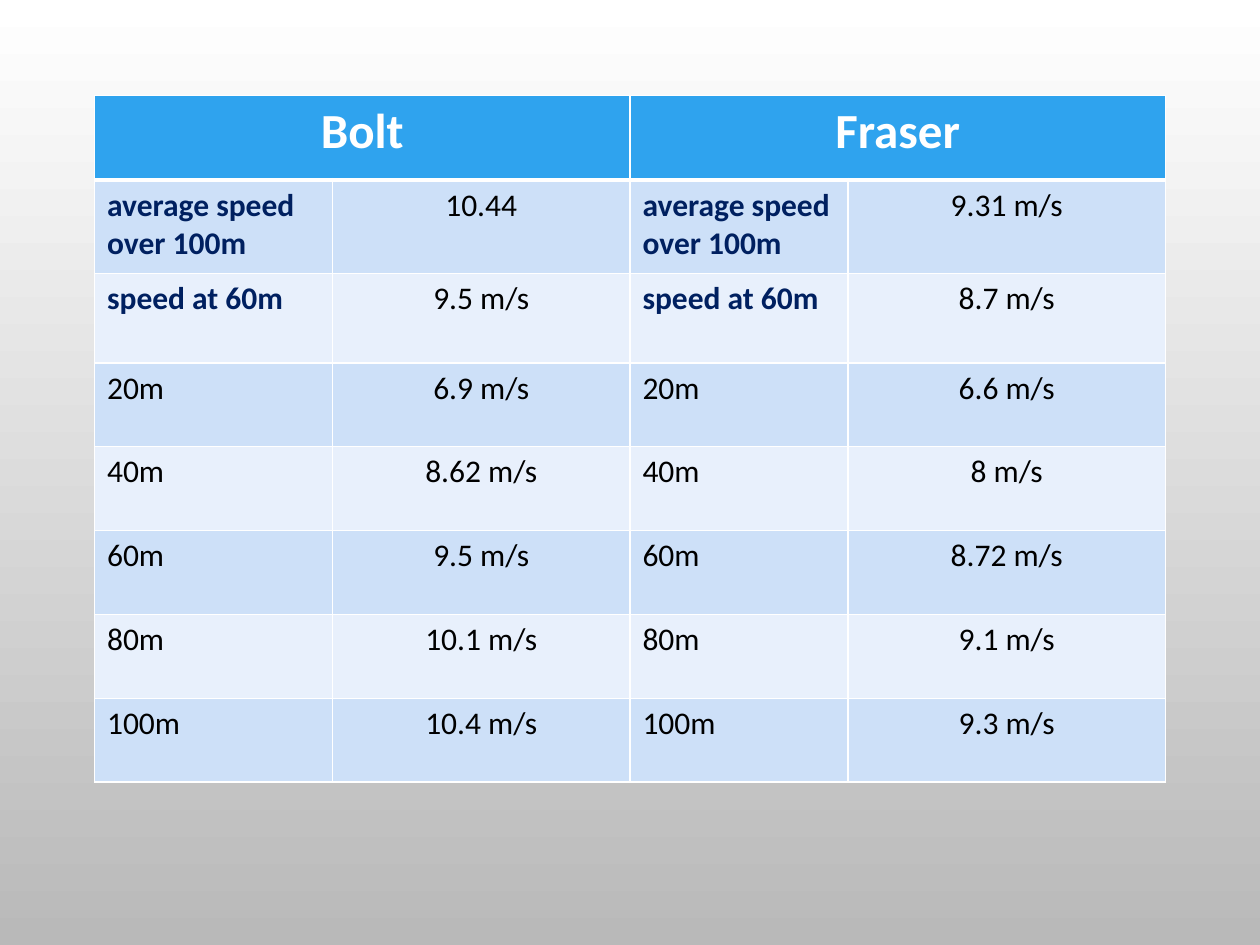
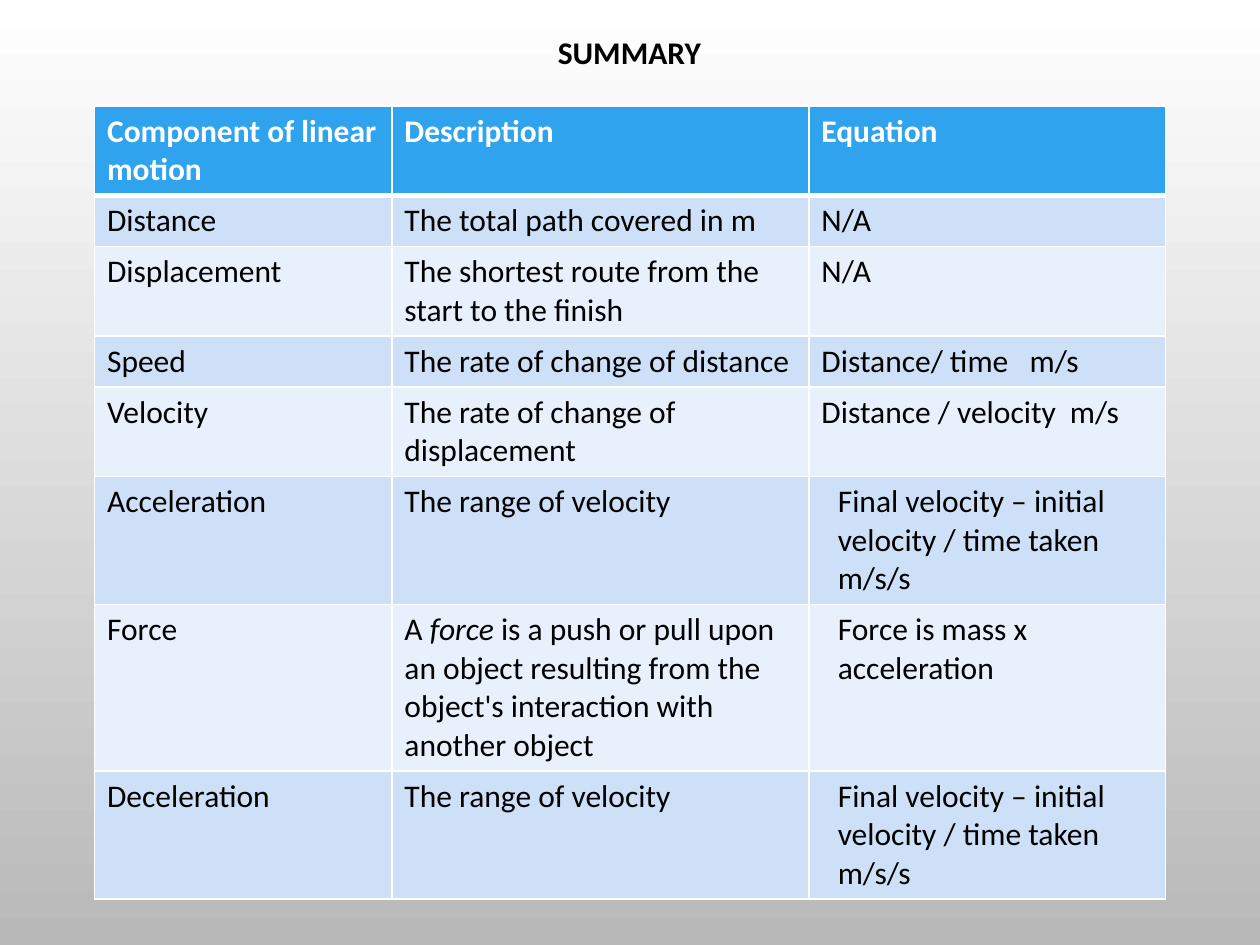
from lxml.etree import SubElement
from pptx import Presentation
from pptx.dml.color import RGBColor
from pptx.enum.text import PP_ALIGN
from pptx.oxml.ns import qn
from pptx.util import Inches, Pt

FONT = "Calibri"
COLORS = {
    "header": "2FA3EE",
    "band_dark": "CDE0F8",
    "band_light": "E8F0FC",
    "white": "FFFFFF",
    "black": "000000",
    "navy": "002060",
    "page_bottom": "B9B9B9",
}

RUNNERS = ["Bolt", "Fraser"]
KEY_SPEEDS = [
    ("average speed over 100m", "10.44", "9.31 m/s"),
    ("speed at 60m", "9.5 m/s", "8.7 m/s"),
]
SPLIT_SPEEDS = [
    ("20m", "6.9 m/s", "6.6 m/s"),
    ("40m", "8.62 m/s", "8 m/s"),
    ("60m", "9.5 m/s", "8.72 m/s"),
    ("80m", "10.1 m/s", "9.1 m/s"),
    ("100m", "10.4 m/s", "9.3 m/s"),
]
SPEED_COLUMNS = [1.89, 2.36, 1.73, 2.52]
SPEED_ROWS = [0.67, 0.74, 0.71] + [3.33 / 5] * 5

SUMMARY_TITLE = "SUMMARY"
SUMMARY_HEADINGS = ["Component of linear motion", "Description", "Equation"]
VELOCITY_CHANGE = "Final velocity – initial velocity / time taken m/s/s"
FORCE_PARTS = [
    ("A ", False),
    ("force", True),
    (" is a push or pull upon an object resulting from the object's "
     "interaction with another object", False),
]
SUMMARY = [
    ("Distance", "The total path covered in m", "N/A"),
    ("Displacement", "The shortest route from the start to the finish", "N/A"),
    ("Speed", "The rate of change of distance", "Distance/ time   m/s"),
    ("Velocity", "The rate of change of displacement", "Distance / velocity  m/s"),
    ("Acceleration", "The range of velocity", VELOCITY_CHANGE),
    ("Force", FORCE_PARTS, "Force is mass x acceleration"),
    ("Deceleration", "The range of velocity", VELOCITY_CHANGE),
]
INDENTED_COMPONENTS = {"Acceleration", "Force", "Deceleration"}
SUMMARY_COLUMNS = [2.36, 3.31, 2.83]
SUMMARY_LINES = [2, 1, 2, 1, 2, 3, 4, 3]


def color(name):
    return RGBColor.from_string(COLORS[name])


def write(frame, text, size=18, ink="black", bold=False, align=PP_ALIGN.LEFT, indent=0):
    para = frame.paragraphs[0]
    para.alignment = align
    if indent:
        properties = para._p.get_or_add_pPr()
        properties.set("marL", str(Inches(indent)))
        properties.set("indent", "0")
    parts = [(text, False)] if isinstance(text, str) else text
    for words, italic in parts:
        span = para.add_run()
        span.text = words
        span.font.name = FONT
        span.font.size = Pt(size)
        span.font.bold = bold
        span.font.italic = italic
        span.font.color.rgb = color(ink)


def draw_borders(cell, top=1, bottom=1):
    properties = cell._tc.get_or_add_tcPr()
    for side, points in (("L", 1), ("R", 1), ("T", top), ("B", bottom)):
        line = SubElement(properties, qn(f"a:ln{side}"), w=str(Pt(points)))
        fill = SubElement(line, qn("a:solidFill"))
        SubElement(fill, qn("a:srgbClr"), val=COLORS["white"])


def add_grid(page, top, columns, rows):
    frame = page.shapes.add_table(
        len(rows), len(columns), Inches(0.75), Inches(top),
        Inches(sum(columns)), Inches(sum(rows)))
    table = frame.table
    for column, width in zip(table.columns, columns):
        column.width = Inches(width)
    for index, (row, height) in enumerate(zip(table.rows, rows)):
        row.height = Inches(height)
        band = "header" if index == 0 else "band_dark" if index % 2 else "band_light"
        for cell in row.cells:
            draw_borders(cell, top=3 if index == 1 else 1, bottom=3 if index == 0 else 1)
            cell.fill.solid()
            cell.fill.fore_color.rgb = color(band)
    return table


def build_speeds(page):
    table = add_grid(page, 0.76, SPEED_COLUMNS, SPEED_ROWS)
    for runner, name in enumerate(RUNNERS):
        left = runner * 2
        heading = table.cell(0, left)
        heading.merge(table.cell(0, left + 1))
        write(heading.text_frame, name, size=28, ink="white", bold=True,
              align=PP_ALIGN.CENTER)
        for index, (label, *speeds) in enumerate(KEY_SPEEDS + SPLIT_SPEEDS, 1):
            key = index <= len(KEY_SPEEDS)
            write(table.cell(index, left).text_frame, label,
                  ink="navy" if key else "black", bold=key)
            write(table.cell(index, left + 1).text_frame, speeds[runner],
                  align=PP_ALIGN.CENTER)


def build_summary(page):
    rows = [0.1 + 0.3 * lines for lines in SUMMARY_LINES]
    table = add_grid(page, 0.84, SUMMARY_COLUMNS, rows)
    for column, heading in enumerate(SUMMARY_HEADINGS):
        write(table.cell(0, column).text_frame, heading, ink="white", bold=True)
    for index, (component, description, equation) in enumerate(SUMMARY, 1):
        write(table.cell(index, 0).text_frame, component)
        write(table.cell(index, 1).text_frame, description)
        write(table.cell(index, 2).text_frame, equation,
              indent=0.13 if component in INDENTED_COMPONENTS else 0)
    box = page.shapes.add_textbox(Inches(2.24), Inches(0.21), Inches(5.51), Inches(0.4))
    box.text_frame.word_wrap = True
    write(box.text_frame, SUMMARY_TITLE, bold=True, align=PP_ALIGN.CENTER)


def main():
    deck = Presentation()
    deck.slide_width, deck.slide_height = Inches(10), Inches(7.5)
    for build in (build_speeds, build_summary):
        page = deck.slides.add_slide(deck.slide_layouts[6])
        backdrop = page.background.fill
        backdrop.gradient()
        backdrop.gradient_angle = 270
        for stop, name in zip(backdrop.gradient_stops, ("white", "page_bottom")):
            stop.color.rgb = color(name)
        build(page)
    deck.save("out.pptx")


if __name__ == "__main__":
    main()
